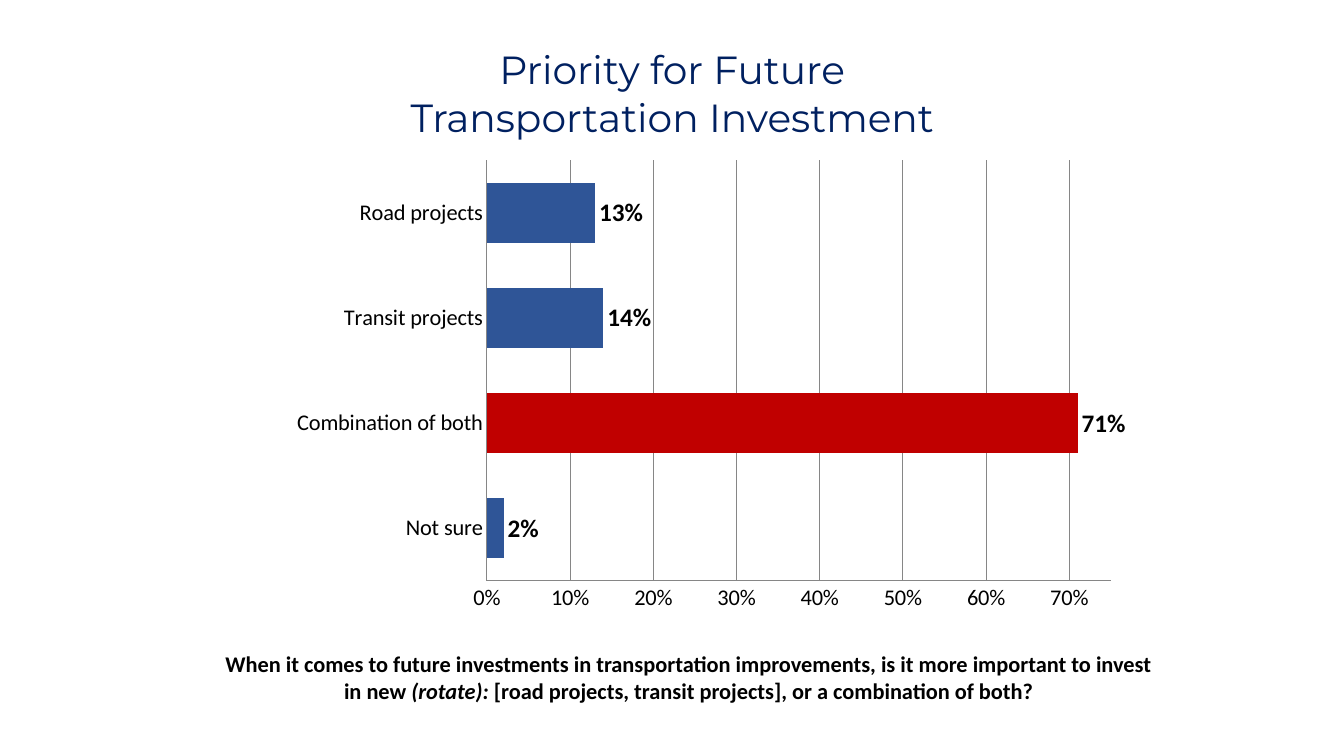
import pptx
import pptx.util
import pptx.chart.data
import pptx.dml.color
import pptx.enum.chart
import pptx.enum.text
import pptx.oxml
import pptx.oxml.ns
from pptx.util import Cm

COLORS = {"title": "002060", "text": "000000", "bar": "2F5597",
          "highlight": "C00000", "line": "868686"}
ANSWERS = {"Not sure": 0.02, "Combination of both": 0.71,
           "Transit projects": 0.14, "Road projects": 0.13}
HIGHLIGHT = "Combination of both"
PLOT = {"x": 0.3, "y": 0.03, "w": 0.67, "h": 0.88}


def rgb(name):
    return pptx.dml.color.RGBColor.from_string(COLORS[name])


def set_font(font, color="text", **formats):
    for name, value in {"name": "Calibri", **formats}.items():
        setattr(font, name, value)
    font.color.rgb = rgb(color)


def add_text(s, box, lines, anchor, auto_size, **font):
    """Centred text; each line is a list of (text, font overrides) runs."""
    tf = s.shapes.add_textbox(*box).text_frame
    formats = {"word_wrap": True, "vertical_anchor": anchor, "auto_size": auto_size}
    for name, value in formats.items():
        setattr(tf, name, value)
    for i, runs in enumerate(lines):
        p = tf.add_paragraph() if i else tf.paragraphs[0]
        p.alignment = pptx.enum.text.PP_ALIGN.CENTER
        for text, overrides in runs:
            r = p.add_run()
            r.text = text
            set_font(r.font, **{**font, **overrides})


def add_title(s, box):
    lines = [[("Priority for Future", {})], [("Transportation Investment", {})]]
    add_text(s, box, lines, pptx.enum.text.MSO_ANCHOR.MIDDLE,
             pptx.enum.text.MSO_AUTO_SIZE.NONE,
             color="title", name="Montserrat", size=pptx.util.Pt(28))


def add_question(s, box):
    runs = [("When it comes to future investments in transportation improvements, "
             "is it more important to invest in new ", {}),
            ("(rotate): ", {"italic": True}),
            ("[road projects, transit projects], or a combination of both?", {})]
    add_text(s, box, [runs], pptx.enum.text.MSO_ANCHOR.TOP,
             pptx.enum.text.MSO_AUTO_SIZE.SHAPE_TO_FIT_TEXT,
             size=pptx.util.Pt(16), bold=True)


def set_plot_layout(chart):
    """Fix the inner plot area as fractions of the chart."""
    area = chart._chartSpace.chart.plotArea
    for old in area.findall(pptx.oxml.ns.qn("c:layout")):
        area.remove(old)
    modes = "".join(f'<c:{k}Mode val="edge"/>' for k in "xy")
    sizes = "".join(f'<c:{k} val="{v}"/>' for k, v in PLOT.items())
    area.insert(0, pptx.oxml.parse_xml(
        f'<c:layout {pptx.oxml.ns.nsdecls("c")}><c:manualLayout>'
        f'<c:layoutTarget val="inner"/>{modes}{sizes}</c:manualLayout></c:layout>'))


def format_axes(chart):
    none = pptx.enum.chart.XL_TICK_MARK.NONE
    for axis in (chart.category_axis, chart.value_axis):
        axis.major_tick_mark = axis.minor_tick_mark = none
        set_font(axis.tick_labels.font, size=pptx.util.Pt(16))
    axis = chart.value_axis
    scale = {"minimum_scale": 0, "maximum_scale": 0.75, "major_unit": 0.1,
             "has_major_gridlines": True}
    for name, value in scale.items():
        setattr(axis, name, value)
    axis.tick_labels.number_format = "0%"
    axis.tick_labels.number_format_is_linked = False
    for line in (axis.format.line, axis.major_gridlines.format.line,
                 chart.category_axis.format.line):
        line.color.rgb = rgb("line")
        line.width = pptx.util.Pt(0.75)


def add_answer_chart(s, box):
    data = pptx.chart.data.CategoryChartData(number_format="0%")
    data.categories = list(ANSWERS)
    data.add_series("Series 1", list(ANSWERS.values()))
    chart = s.shapes.add_chart(
        pptx.enum.chart.XL_CHART_TYPE.BAR_CLUSTERED, *box, data).chart
    chart.has_legend = chart.has_title = False
    set_font(chart.font, size=pptx.util.Pt(18))
    format_axes(chart)
    set_plot_layout(chart)

    plot = chart.plots[0]
    plot.gap_width = 75
    plot.vary_by_categories = False
    series = plot.series[0]
    point = series.points[list(ANSWERS).index(HIGHLIGHT)]
    for part, color in ((series, "bar"), (point, "highlight")):
        part.format.fill.solid()
        part.format.fill.fore_color.rgb = rgb(color)

    labels = series.data_labels
    formats = {"show_value": True, "number_format": "0%",
               "number_format_is_linked": False,
               "position": pptx.enum.chart.XL_LABEL_POSITION.OUTSIDE_END}
    for name, value in formats.items():
        setattr(labels, name, value)
    set_font(labels.font, size=pptx.util.Pt(18), bold=True)


def main():
    prs = pptx.Presentation()
    prs.slide_width, prs.slide_height = Cm(33.87), Cm(19.05)
    s = prs.slides.add_slide(prs.slide_layouts[6])
    add_answer_chart(s, (Cm(5.23), Cm(3.68), Cm(23.47), Cm(12.04)))
    add_question(s, (Cm(5.23), Cm(16.26), Cm(24.26), Cm(1.63)))
    add_title(s, (Cm(5.51), Cm(1.07), Cm(22.86), Cm(2.54)))
    prs.save("out.pptx")


if __name__ == "__main__":
    main()
